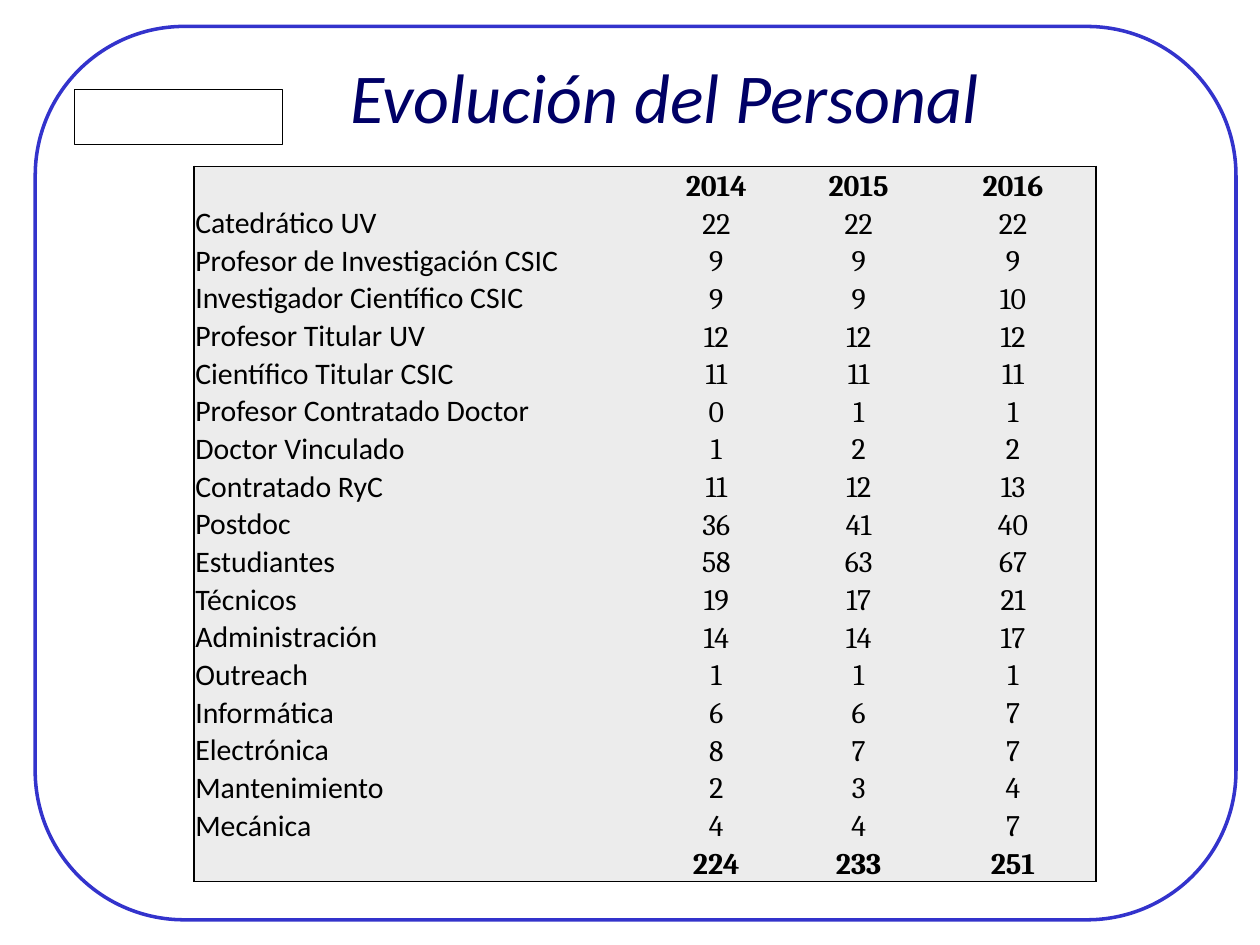
"""Build a slide with a table of staff numbers by year."""
from typing import NamedTuple

from lxml import etree
from pptx import Presentation
from pptx.dml.color import RGBColor
from pptx.enum import shapes as sh, text as tx
from pptx.oxml import ns
from pptx.util import Inches, Pt

BLACK = RGBColor(0x00, 0x00, 0x00)
BLUE = RGBColor(0x33, 0x33, 0xCC)
NAVY = RGBColor(0x00, 0x00, 0x66)
GREY = RGBColor(0xEC, 0xEC, 0xEC)


class Box(NamedTuple):
    shape: sh.MSO_SHAPE
    left: float
    top: float
    width: float
    height: float
    line: RGBColor
    weight: float


class Row(NamedTuple):
    label: str
    counts: tuple
    bold: bool = False


BOXES = [
    Box(sh.MSO_SHAPE.ROUNDED_RECTANGLE, 0.28, 0.21, 9.53, 7.09, BLUE, 2),
    Box(sh.MSO_SHAPE.RECTANGLE, 0.59, 0.71, 1.65, 0.44, BLACK, 0.5),
]
ROWS = [
    Row("", (2014, 2015, 2016), True),
    Row("Catedrático UV", (22, 22, 22)),
    Row("Profesor de Investigación CSIC", (9, 9, 9)),
    Row("Investigador Científico CSIC", (9, 9, 10)),
    Row("Profesor Titular UV", (12, 12, 12)),
    Row("Científico Titular CSIC", (11, 11, 11)),
    Row("Profesor Contratado Doctor", (0, 1, 1)),
    Row("Doctor Vinculado", (1, 2, 2)),
    Row("Contratado RyC", (11, 12, 13)),
    Row("Postdoc", (36, 41, 40)),
    Row("Estudiantes", (58, 63, 67)),
    Row("Técnicos", (19, 17, 21)),
    Row("Administración", (14, 14, 17)),
    Row("Outreach", (1, 1, 1)),
    Row("Informática", (6, 6, 7)),
    Row("Electrónica", (8, 7, 7)),
    Row("Mantenimiento", (2, 3, 4)),
    Row("Mecánica", (4, 4, 7)),
    Row("", (224, 233, 251), True),
]
WIDTHS = (3.58, 1.13, 1.13, 1.32)
HEIGHT = 0.24


def write(frame, words: str, *, size: float, font: str, color: RGBColor,
          align=tx.PP_ALIGN.CENTER, bold=False, italic=False) -> None:
    """Put one formatted line into a text frame."""
    para = frame.paragraphs[0]
    para.alignment = align
    if not words:
        end = etree.SubElement(para._p, ns.qn("a:endParaRPr"))
        end.set("sz", str(int(size * 100)))
        return
    run = para.add_run()
    run.text = words
    run.font.size, run.font.name = Pt(size), font
    run.font.bold, run.font.italic = bold, italic
    run.font.color.rgb = color


def draw(slide, box: Box) -> None:
    """Draw an unfilled outline."""
    shape = slide.shapes.add_shape(box.shape, *map(Inches, box[1:5]))
    shape.shadow.inherit = False
    shape.fill.background()
    shape.line.color.rgb = box.line
    shape.line.width = Pt(box.weight)


def edge(cell, sides: dict) -> None:
    """Rule the sides marked true and clear the others."""
    props = cell._tc.get_or_add_tcPr()
    for side, ruled in sides.items():
        line = etree.SubElement(props, ns.qn(f"a:ln{side}"), w=str(Pt(1)))
        fill = etree.SubElement(
            line, ns.qn("a:solidFill" if ruled else "a:noFill"))
        if ruled:
            etree.SubElement(fill, ns.qn("a:srgbClr"), val=str(BLACK))


def tabulate(slide, rows: list) -> None:
    """Add the staff table with a ruled outer border."""
    table = slide.shapes.add_table(
        len(rows), len(WIDTHS), Inches(1.54), Inches(1.32),
        Inches(sum(WIDTHS)), Inches(HEIGHT * len(rows))).table
    table.first_row = table.horz_banding = False
    for col, width in zip(table.columns, WIDTHS):
        col.width = Inches(width)
    for r, row in enumerate(rows):
        table.rows[r].height = Inches(HEIGHT)
        for c, value in enumerate((row.label, *row.counts)):
            cell = table.cell(r, c)
            cell.margin_left = cell.margin_right = Inches(0.01)
            cell.margin_top, cell.margin_bottom = Inches(0.01), 0
            cell.vertical_anchor = tx.MSO_ANCHOR.BOTTOM
            edge(cell, {"L": c == 0, "R": c == len(WIDTHS) - 1,
                        "T": r == 0, "B": r == len(rows) - 1})
            cell.fill.solid()
            cell.fill.fore_color.rgb = GREY
            write(cell.text_frame, str(value), size=17, color=BLACK,
                  font="Cambria" if c else "Calibri", bold=row.bold,
                  align=tx.PP_ALIGN.CENTER if c else tx.PP_ALIGN.LEFT)


def main() -> None:
    """Build and save the slide."""
    deck = Presentation()
    deck.slide_width, deck.slide_height = Inches(10), Inches(7.5)
    slide = deck.slides.add_slide(deck.slide_layouts[5])
    for box in BOXES:
        draw(slide, box)
    title = slide.shapes.title
    title.left, title.top = Inches(2.4), Inches(0.44)
    title.width, title.height = Inches(5.75), Inches(0.63)
    title.text_frame.vertical_anchor = tx.MSO_ANCHOR.MIDDLE
    write(title.text_frame, "Evolución del Personal", size=40,
          font="Calibri", color=NAVY, italic=True)
    tabulate(slide, ROWS)
    deck.save("out.pptx")


if __name__ == "__main__":
    main()
